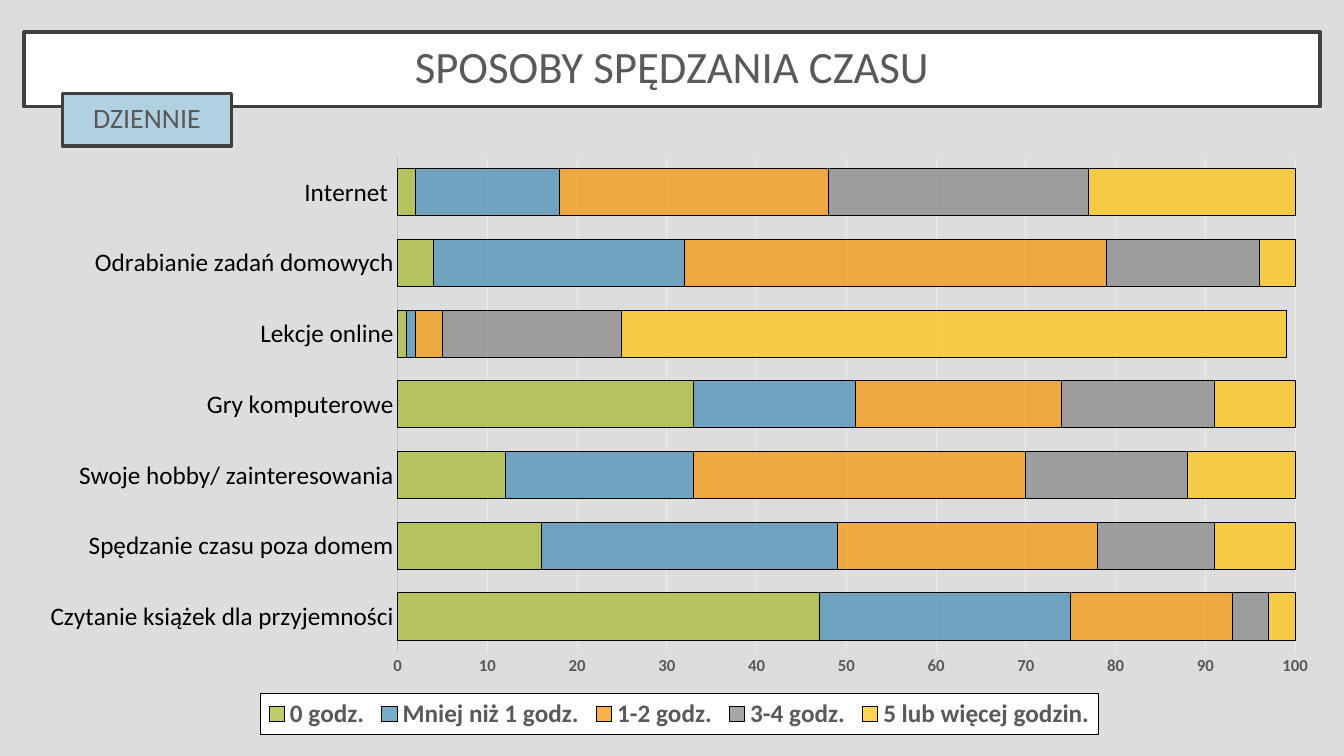
from dataclasses import dataclass

from lxml import etree
from pptx import Presentation
from pptx.chart.chart import Chart
from pptx.chart.data import CategoryChartData
from pptx.dml.color import RGBColor
from pptx.enum.chart import XL_CHART_TYPE, XL_LEGEND_POSITION, XL_TICK_MARK
from pptx.enum.shapes import MSO_SHAPE
from pptx.enum.text import MSO_ANCHOR, PP_ALIGN
from pptx.oxml.ns import qn
from pptx.slide import Slide
from pptx.text.text import Font
from pptx.util import Cm, Pt

RECTANGLE = MSO_SHAPE.RECTANGLE
MIDDLE = MSO_ANCHOR.MIDDLE
CENTER = PP_ALIGN.CENTER
BAR_STACKED = XL_CHART_TYPE.BAR_STACKED
LEGEND_BOTTOM = XL_LEGEND_POSITION.BOTTOM
NO_TICK = XL_TICK_MARK.NONE

BLACK = RGBColor(0x00, 0x00, 0x00)
WHITE = RGBColor(0xFF, 0xFF, 0xFF)
BACKGROUND = RGBColor(0xDD, 0xDD, 0xDD)
PALE_BLUE = RGBColor(0xB1, 0xD1, 0xE3)
FRAME = RGBColor(0x40, 0x40, 0x40)
TEXT_GRAY = RGBColor(0x59, 0x59, 0x59)
AXIS_GRAY = RGBColor(0xBF, 0xBF, 0xBF)
GRID_GRAY = RGBColor(0xEC, 0xEC, 0xEC)
GREEN = RGBColor(0xA6, 0xB7, 0x27)
BLUE = RGBColor(0x41, 0x8A, 0xB3)
ORANGE = RGBColor(0xF6, 0x92, 0x00)
GRAY = RGBColor(0x83, 0x83, 0x83)
YELLOW = RGBColor(0xFE, 0xC3, 0x06)

FONT_NAME = "Calibri"
THIN_LINE = Pt(0.75)
BAR_OPACITY = 70


@dataclass(frozen=True)
class Banner:
    text: str
    left: float
    top: float
    width: float
    height: float
    fill: RGBColor
    font_size: int


@dataclass(frozen=True)
class TimeSeries:
    name: str
    color: RGBColor
    values: tuple[int, ...]


TITLE = Banner("SPOSOBY SPĘDZANIA CZASU", 0.61, 0.81, 32.66, 1.88, WHITE, 32)
DAILY_TAG = Banner("DZIENNIE", 1.57, 2.36, 4.27, 1.32, PALE_BLUE, 20)

ACTIVITIES = (
    "Czytanie książek dla przyjemności",
    "Spędzanie czasu poza domem",
    "Swoje hobby/ zainteresowania",
    "Gry komputerowe",
    "Lekcje online",
    "Odrabianie zadań domowych",
    "Internet ",
)
TIME_SERIES = (
    TimeSeries("0 godz.", GREEN, (47, 16, 12, 33, 1, 4, 2)),
    TimeSeries("Mniej niż 1 godz.", BLUE, (28, 33, 21, 18, 1, 28, 16)),
    TimeSeries("1-2 godz.", ORANGE, (18, 29, 37, 23, 3, 47, 30)),
    TimeSeries("3-4 godz.", GRAY, (4, 13, 18, 17, 20, 17, 29)),
    TimeSeries("5 lub więcej godzin.", YELLOW, (3, 9, 12, 10, 74, 4, 24)),
)


def style_font(font: Font, size: int, color: RGBColor, bold: bool = False) -> None:
    font.name = FONT_NAME
    font.size = Pt(size)
    font.bold = bold
    font.color.rgb = color


def draw_banner(slide: Slide, banner: Banner) -> None:
    shape = slide.shapes.add_shape(
        RECTANGLE, Cm(banner.left), Cm(banner.top), Cm(banner.width), Cm(banner.height)
    )
    shape.shadow.inherit = False
    shape.fill.solid()
    shape.fill.fore_color.rgb = banner.fill
    shape.line.color.rgb = FRAME
    shape.line.width = Pt(2.5)
    frame = shape.text_frame
    frame.word_wrap = True
    frame.vertical_anchor = MIDDLE
    frame.margin_left = frame.margin_right = Cm(0.5)
    frame.margin_top = frame.margin_bottom = Cm(0.5)
    paragraph = frame.paragraphs[0]
    paragraph.text = banner.text
    paragraph.alignment = CENTER
    paragraph.line_spacing = 0.9
    style_font(paragraph.font, banner.font_size, TEXT_GRAY)


def place_part(
    parent: etree._Element, index: int, bounds: dict[str, float], inner: bool = False
) -> None:
    for existing in parent.findall(qn("c:layout")):
        parent.remove(existing)
    layout = etree.Element(qn("c:layout"))
    manual = etree.SubElement(layout, qn("c:manualLayout"))
    if inner:
        etree.SubElement(manual, qn("c:layoutTarget")).set("val", "inner")
    for mode in ("xMode", "yMode"):
        etree.SubElement(manual, qn(f"c:{mode}")).set("val", "edge")
    for key, value in bounds.items():
        etree.SubElement(manual, qn(f"c:{key}")).set("val", str(value))
    parent.insert(index, layout)


def style_axes(chart: Chart) -> None:
    category_axis = chart.category_axis
    category_axis.major_tick_mark = NO_TICK
    category_axis.format.line.color.rgb = AXIS_GRAY
    category_axis.format.line.width = THIN_LINE
    style_font(category_axis.tick_labels.font, 18, BLACK)

    value_axis = chart.value_axis
    value_axis.minimum_scale = 0
    value_axis.maximum_scale = 100
    value_axis.major_unit = 10
    value_axis.major_tick_mark = NO_TICK
    value_axis.format.line.fill.background()
    value_axis.major_gridlines.format.line.color.rgb = GRID_GRAY
    value_axis.major_gridlines.format.line.width = THIN_LINE
    style_font(value_axis.tick_labels.font, 12, TEXT_GRAY, bold=True)


def style_legend(chart: Chart) -> None:
    chart.has_legend = True
    legend = chart.legend
    legend.position = LEGEND_BOTTOM
    legend.include_in_layout = False
    style_font(legend.font, 18, TEXT_GRAY, bold=True)
    element = legend._element
    place_part(element, 1, {"x": 0.18, "y": 0.93, "w": 0.64, "h": 0.07})
    properties = etree.Element(qn("c:spPr"))
    fill = etree.SubElement(properties, qn("a:solidFill"))
    etree.SubElement(fill, qn("a:srgbClr")).set("val", str(WHITE))
    line = etree.SubElement(properties, qn("a:ln"), w=str(int(THIN_LINE)))
    line_fill = etree.SubElement(line, qn("a:solidFill"))
    etree.SubElement(line_fill, qn("a:srgbClr")).set("val", str(BLACK))
    element.find(qn("c:overlay")).addnext(properties)


def draw_chart(slide: Slide) -> None:
    data = CategoryChartData(number_format="General")
    data.categories = ACTIVITIES
    for entry in TIME_SERIES:
        data.add_series(entry.name, entry.values)
    chart = slide.shapes.add_chart(
        BAR_STACKED, Cm(0.61), Cm(3.66), Cm(33.02), Cm(14.86), data
    ).chart
    chart.has_title = False
    style_font(chart.font, 10, BLACK)
    plot = chart.plots[0]
    plot.gap_width = 50
    plot.overlap = 100
    plot.vary_by_categories = False
    for entry, series in zip(TIME_SERIES, plot.series):
        series.invert_if_negative = False
        fill = series.format.fill
        fill.solid()
        fill.fore_color.rgb = entry.color
        color = series._element.find(
            "/".join(qn(tag) for tag in ("c:spPr", "a:solidFill", "a:srgbClr"))
        )
        etree.SubElement(color, qn("a:alpha")).set("val", str(BAR_OPACITY * 1000))
        series.format.line.color.rgb = BLACK
        series.format.line.width = THIN_LINE
    style_axes(chart)
    style_legend(chart)
    plot_area = chart._chartSpace.chart.plotArea
    place_part(plot_area, 0, {"x": 0.285, "y": 0.02, "w": 0.685, "h": 0.84}, inner=True)


def main() -> None:
    presentation = Presentation()
    presentation.slide_width = Cm(33.87)
    presentation.slide_height = Cm(19.05)
    slide = presentation.slides.add_slide(presentation.slide_layouts[6])
    slide.background.fill.solid()
    slide.background.fill.fore_color.rgb = BACKGROUND
    draw_banner(slide, TITLE)
    draw_chart(slide)
    draw_banner(slide, DAILY_TAG)
    presentation.save("out.pptx")


if __name__ == "__main__":
    main()
